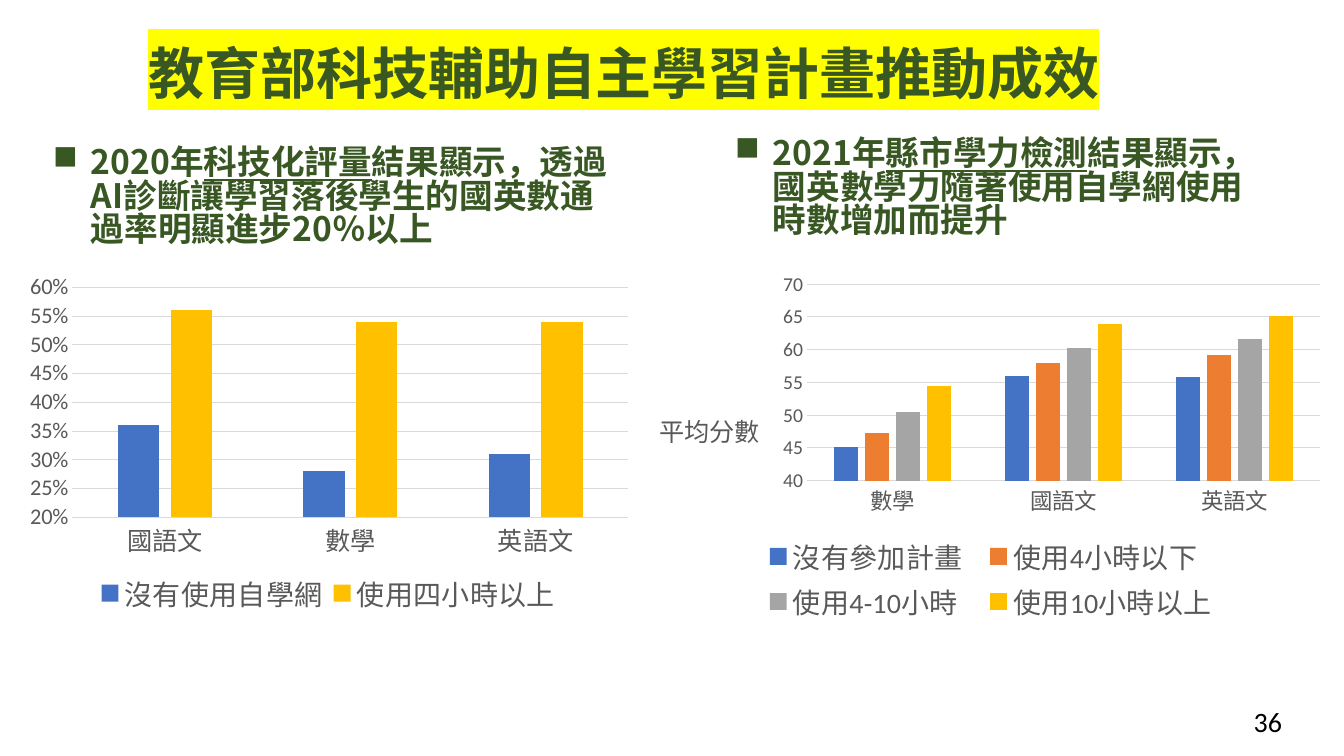
"""Build the slide on the results of the technology-assisted self-directed learning plan."""
import pptx
import pptx.util
import pptx.chart.data
import pptx.dml.color
import pptx.enum.chart
import pptx.enum.text
import pptx.oxml
import pptx.oxml.ns
from lxml import etree

SCALE = 914400 / 100.8
THEME = {
    "green": "385723", "black": "000000", "gray": "595959", "grid": "D9D9D9", "mark": "FFFF00",
    "blue": "4472C4", "orange": "ED7D31", "silver": "A5A5A5", "gold": "FFC000",
    "cjk": "Noto Sans CJK SC", "latin": "Calibri",
    "title": 40, "body": 24, "legend": 20, "number": 20, "axis_title": 18,
}
qn = pptx.oxml.ns.qn
ALIGN = pptx.enum.text.PP_ALIGN


def style(font, size, face, color, **extra):
    font.color.rgb = pptx.dml.color.RGBColor.from_string(THEME[color])
    for key, value in {"size": pptx.util.Pt(size), "name": THEME[face], **extra}.items():
        setattr(font, key, value)


def place(parent, index, box, inner=False):
    for old in parent.findall(qn("c:layout")):
        parent.remove(old)
    layout = pptx.oxml.parse_xml(f'<c:layout {pptx.oxml.ns.nsdecls("c")}><c:manualLayout/></c:layout>')
    values = {"layoutTarget": "inner"} if inner else {}
    values.update(xMode="edge", yMode="edge")
    values.update(zip("xywh", box))
    for tag, value in values.items():
        etree.SubElement(layout[0], qn(f"c:{tag}")).set("val", str(value))
    parent.insert(index, layout)


prs = pptx.Presentation()
prs.slide_width, prs.slide_height = round(1344 * SCALE), round(756 * SCALE)
s = prs.slides.add_slide(prs.slide_layouts[6])

charts = [
    {"box": (16, 266, 625, 359), "cats": ["國語文", "數學", "英語文"], "format": "0%",
     "range": (0.2, 0.6, 0.05), "cat": (18, "cjk"), "val": 16, "legend_face": "cjk", "title": None,
     "plot": (0.09, 0.06, 0.89, 0.64), "legend": (0.12, 0.87, 0.76, 0.12),
     "series": [("沒有使用自學網", "blue", (0.36, 0.28, 0.31)),
                ("使用四小時以上", "gold", (0.56, 0.54, 0.54))]},
    {"box": (641, 266, 693, 364), "cats": ["數學", "國語文", "英語文"], "format": "General",
     "range": (40, 70, 5), "cat": (16, "latin"), "val": 14, "legend_face": "latin", "title": "平均分數",
     "plot": (0.24, 0.05, 0.74, 0.54), "legend": (0.16, 0.73, 0.69, 0.26),
     "series": [("沒有參加計畫", "blue", (45.2, 56, 55.8)),
                ("使用4小時以下", "orange", (47.3, 58, 59.2)),
                ("使用4-10小時", "silver", (50.5, 60.3, 61.6)),
                ("使用10小時以上", "gold", (54.5, 63.9, 65.2))]},
]
roots = [s.shapes.element]
for c in charts:
    data = pptx.chart.data.CategoryChartData(number_format=c["format"])
    data.categories = c["cats"]
    for name, color, values in c["series"]:
        data.add_series(name, values)
    chart = s.shapes.add_chart(pptx.enum.chart.XL_CHART_TYPE.COLUMN_CLUSTERED,
                               *[round(v * SCALE) for v in c["box"]], data).chart
    style(chart.font, 10, "latin", "black")
    chart.has_title = False
    plot = chart.plots[0]
    plot.gap_width, plot.overlap, plot.vary_by_categories = 219, -27, False
    for series, (name, color, values) in zip(plot.series, c["series"]):
        series.format.fill.solid()
        series.format.fill.fore_color.rgb = pptx.dml.color.RGBColor.from_string(THEME[color])

    cat, val = chart.category_axis, chart.value_axis
    style(cat.tick_labels.font, *c["cat"], "gray")
    style(val.tick_labels.font, c["val"], "latin", "gray")
    val.tick_labels.number_format = c["format"]
    val.tick_labels.number_format_is_linked = False
    val.minimum_scale, val.maximum_scale, val.major_unit = c["range"]
    for axis in (cat, val):
        axis.major_tick_mark = axis.minor_tick_mark = pptx.enum.chart.XL_TICK_MARK.NONE
    cat.has_major_gridlines, val.has_major_gridlines = False, True
    val.format.line.fill.background()
    for line in (cat.format.line, val.major_gridlines.format.line):
        line.color.rgb = pptx.dml.color.RGBColor.from_string(THEME["grid"])
        line.width = pptx.util.Pt(0.75)

    if c["title"]:
        tf = val.axis_title.text_frame
        tf.text = c["title"]
        style(tf.paragraphs[0].runs[0].font, THEME["axis_title"], "latin", "gray", bold=False)
        title = val.axis_title._element
        body = title.find(".//" + qn("a:bodyPr"))
        body.set("rot", "0")
        body.set("vert", "horz")
        place(title, 1, (0.02, 0.38))

    chart.has_legend = True
    chart.legend.position = pptx.enum.chart.XL_LEGEND_POSITION.BOTTOM
    chart.legend.include_in_layout = False
    style(chart.legend.font, THEME["legend"], c["legend_face"], "gray")
    root = chart._chartSpace
    place(root.find(".//" + qn("c:legend")), 1, c["legend"])
    place(root.find(".//" + qn("c:plotArea")), 0, c["plot"], inner=True)
    roots.append(root)

texts = [
    {"box": (990, 701, 302, 40), "runs": ["36"], "font": (THEME["number"], "latin", "black"),
     "bold": False, "align": ALIGN.RIGHT, "anchor": "MIDDLE", "spacing": 1},
    {"box": (133, 41, 982, 78), "runs": ["教育部科技輔助自主學習計畫推動成效"],
     "font": (THEME["title"], "cjk", "green"), "bold": True, "align": ALIGN.CENTER,
     "anchor": "TOP", "spacing": 0.9, "mark": True},
    {"box": (43, 143, 583, 132), "bullet": True,
     "runs": ["2020年", "科技化評量", "結果顯示，透過AI診斷讓學習落後學生的國英數通過率明顯進步20％以上"]},
    {"box": (725, 134, 558, 132), "bullet": True,
     "runs": ["2021年", "縣市學力檢測", "結果顯示，國英數學力隨著使用自學網使用時數增加而提升"]},
]
body_text = {"font": (THEME["body"], "cjk", "green"), "bold": True, "align": ALIGN.LEFT,
             "anchor": "TOP", "spacing": 0.83}
for t in texts:
    t = {**body_text, **t}
    tf = s.shapes.add_textbox(*[round(v * SCALE) for v in t["box"]]).text_frame
    tf.word_wrap = not t.get("mark", False)
    tf.vertical_anchor = pptx.enum.text.MSO_ANCHOR[t["anchor"]]
    p = tf.paragraphs[0]
    p.alignment, p.line_spacing = t["align"], t["spacing"]
    if t.get("bullet"):
        pPr = p._p.get_or_add_pPr()
        indent = round(38 * SCALE)
        pPr.set("marL", str(indent))
        pPr.set("indent", str(-indent))
        etree.SubElement(pPr, qn("a:buChar")).set("char", "■")
    for i, text in enumerate(t["runs"]):
        r = p.add_run()
        r.text = text
        style(r.font, *t["font"], bold=t["bold"], underline=i == 1)
        if t.get("mark"):
            mark = etree.Element(qn("a:highlight"))
            etree.SubElement(mark, qn("a:srgbClr")).set("val", THEME["mark"])
            r._r.rPr.find(qn("a:latin")).addprevious(mark)

for root in roots:
    for latin in list(root.iter(qn("a:latin"))):
        ea = etree.Element(qn("a:ea"))
        ea.set("typeface", THEME["cjk"])
        latin.addnext(ea)

prs.save("out.pptx")
